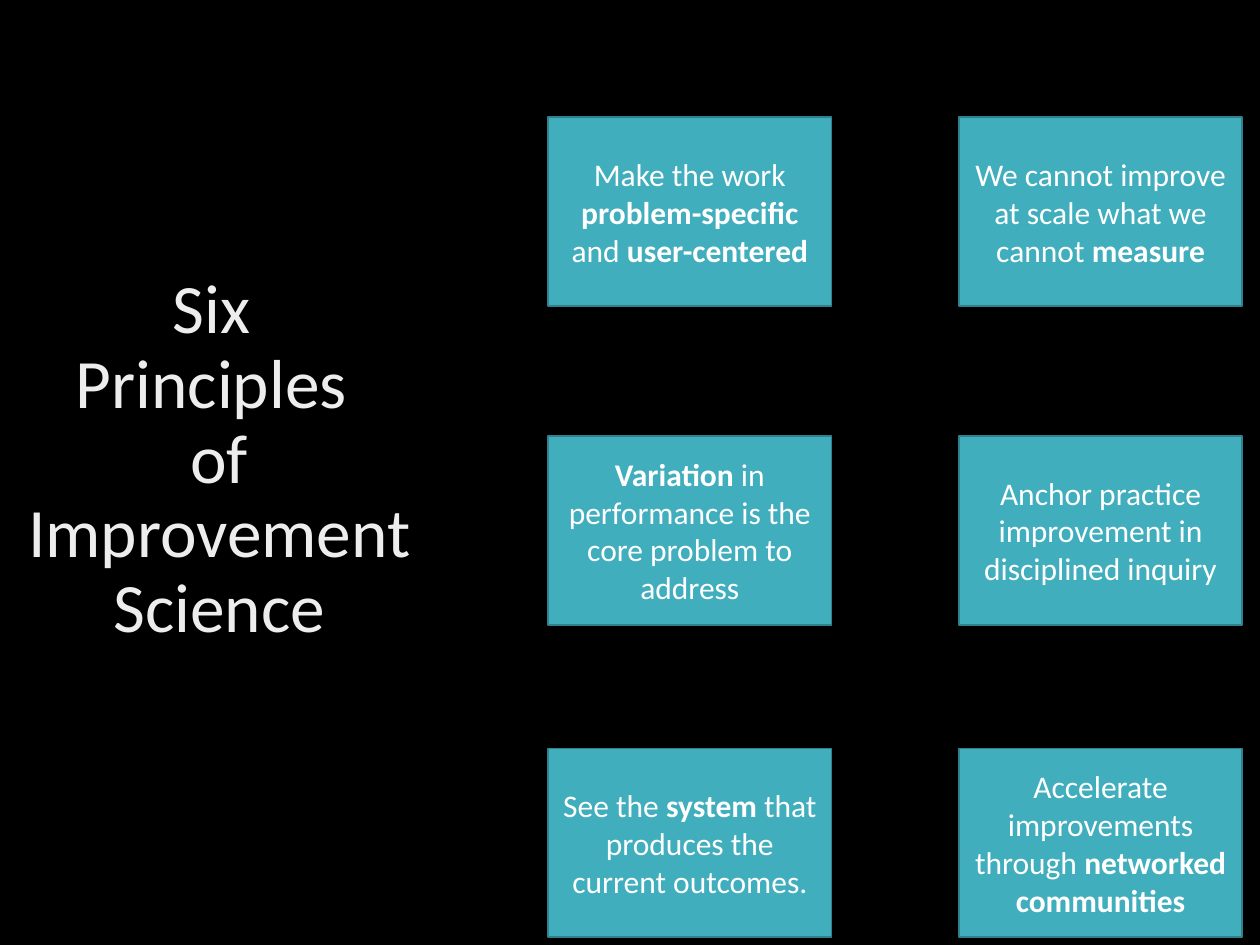
from pptx import Presentation
from pptx.dml.color import RGBColor
from pptx.enum.shapes import MSO_SHAPE
from pptx.enum.text import MSO_ANCHOR, PP_ALIGN
from pptx.util import Inches, Pt

BLACK = RGBColor(0x00, 0x00, 0x00)
WHITE = RGBColor(0xFF, 0xFF, 0xFF)
PALE = RGBColor(0xED, 0xED, 0xED)
TEAL = RGBColor(0x41, 0xAE, 0xBD)
DARK_TEAL = RGBColor(0x30, 0x81, 0x8C)

COLUMNS, ROWS = 100, 75
UNIT = Inches(10) // COLUMNS

TITLE_BOX = (0, 29.3, 34.8, 14.5)
CARDS_BOX = (43.5, 9.3, 55.1, 65.1)
CARD_SIZE = (22.5, 15)
ROW_OFFSETS = (0, 25.3, 50.1)

TITLE_FORMAT = {"name": "Calibri", "size": Pt(39.6)}
CARD_FORMAT = {"name": "Calibri", "size": Pt(18)}

TITLE = "Six \vPrinciples \vof Improvement Science"
PRINCIPLES = [
    ("Make the work *problem-specific* and *user-centered*",
     "We cannot improve at scale what we cannot *measure*"),
    ("*Variation* in performance is the core problem to address",
     "Anchor practice improvement in disciplined inquiry"),
    ("See the *system* that produces the current outcomes.",
     "Accelerate improvements through *networked communities*"),
]


def grid(*cells):
    return [round(cell * UNIT) for cell in cells]


def set_font(font, formats, color):
    for name, value in formats.items():
        setattr(font, name, value)
    font.color.rgb = color


def centre_text(sp):
    tf = sp.text_frame
    tf.word_wrap = True
    tf.vertical_anchor = MSO_ANCHOR.MIDDLE
    p = tf.paragraphs[0]
    p.alignment = PP_ALIGN.CENTER
    return p


def add_title(s, box):
    p = centre_text(s.shapes.add_textbox(*grid(*box)))
    p.text = TITLE
    p.line_spacing = 0.9
    for r in p.runs:
        set_font(r.font, TITLE_FORMAT, PALE)


def add_card(s, box, text):
    sp = s.shapes.add_shape(MSO_SHAPE.RECTANGLE, *grid(*box))
    sp.shadow.inherit = False
    sp.fill.solid()
    sp.fill.fore_color.rgb = TEAL
    sp.line.color.rgb = DARK_TEAL
    sp.line.width = Pt(1)
    p = centre_text(sp)
    for i, part in enumerate(text.split("*")):
        if part:
            r = p.add_run()
            r.text = part
            set_font(r.font, CARD_FORMAT | {"bold": i % 2 == 1}, WHITE)


def add_cards(s, box):
    left, top, width, _ = box
    card_width, card_height = CARD_SIZE
    for offset, texts in zip(ROW_OFFSETS, PRINCIPLES):
        for column, text in enumerate(texts):
            x = left + column * (width - card_width)
            add_card(s, (x, top + offset, card_width, card_height), text)


def main():
    prs = Presentation()
    prs.slide_width, prs.slide_height = grid(COLUMNS, ROWS)
    s = prs.slides.add_slide(prs.slide_layouts[6])
    s.background.fill.solid()
    s.background.fill.fore_color.rgb = BLACK
    add_title(s, TITLE_BOX)
    add_cards(s, CARDS_BOX)
    prs.save("out.pptx")


if __name__ == "__main__":
    main()
